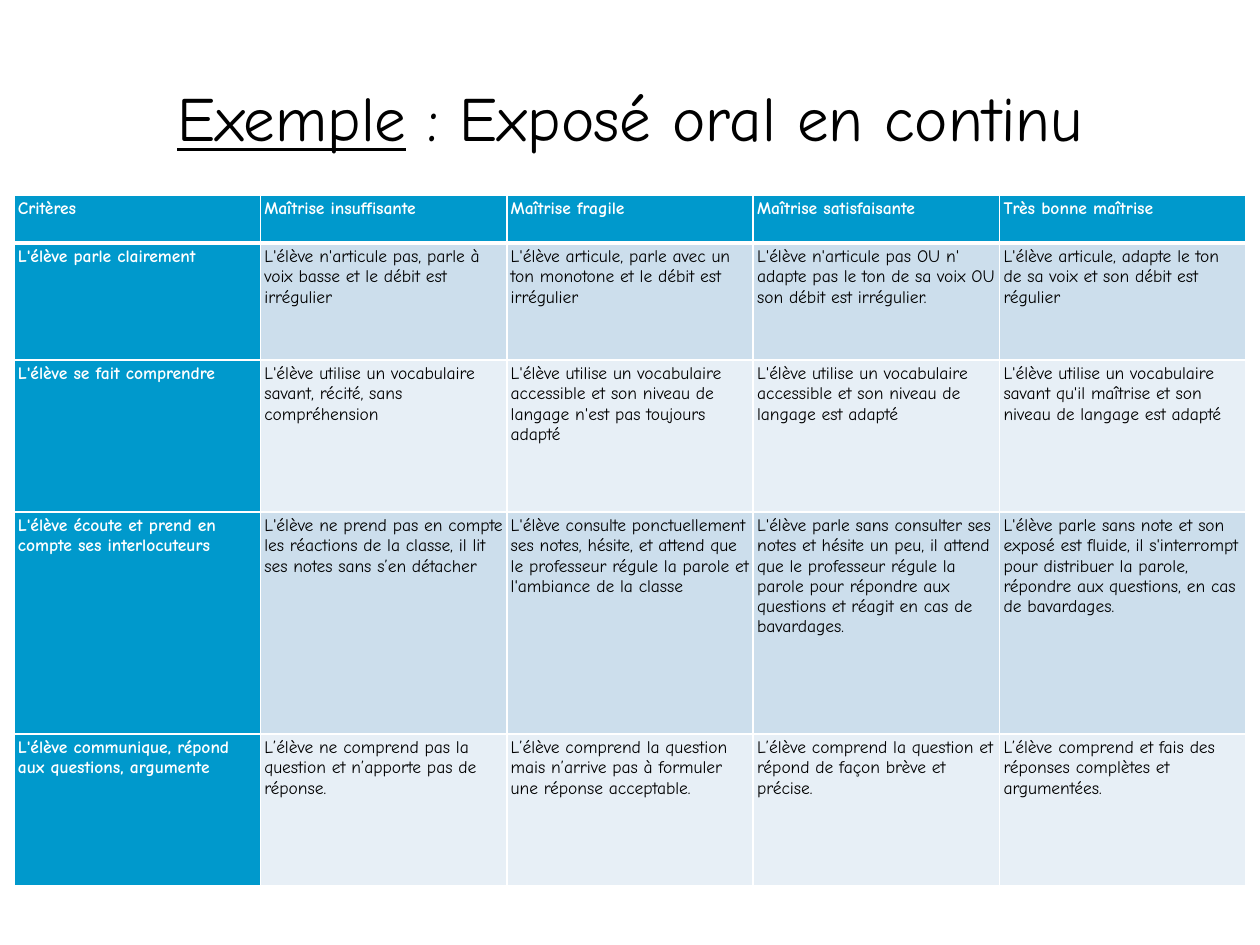
"""Build a slide with a grading grid for an oral talk."""
import pptx
import pptx.dml.color
import pptx.enum.text
import pptx.oxml
import pptx.oxml.ns
import pptx.util

RGB = pptx.dml.color.RGBColor
BLACK = RGB(0x00, 0x00, 0x00)
WHITE = RGB(0xFF, 0xFF, 0xFF)
BLUE = RGB(0x00, 0x99, 0xCC)
MID = RGB(0xCC, 0xDE, 0xEC)
PALE = RGB(0xE7, 0xEF, 0xF6)

HEIGHTS = [48, 117, 152, 222, 152]
GRID = [
    ["Critères", "Maîtrise insuffisante", "Maîtrise fragile",
     "Maîtrise satisfaisante", "Très bonne maîtrise"],
    ["L'élève parle clairement",
     "L'élève n'articule pas, parle à voix basse et le débit est irrégulier",
     "L'élève articule, parle avec un ton monotone et le débit est irrégulier",
     "L'élève n'articule pas OU n' adapte pas le ton de sa voix OU son débit est irrégulier.",
     "L'élève articule, adapte le ton de sa voix et son débit est régulier"],
    ["L'élève se fait comprendre",
     "L'élève utilise un vocabulaire savant, récité, sans compréhension",
     "L'élève utilise un vocabulaire accessible et son niveau de langage "
     "n'est pas toujours adapté",
     "L'élève utilise un vocabulaire accessible et son niveau de langage est adapté",
     "L'élève utilise un vocabulaire savant qu'il maîtrise et son niveau de langage est adapté"],
    ["L'élève écoute et prend en compte ses interlocuteurs",
     "L'élève ne prend pas en compte les réactions de la classe, "
     "il lit ses notes sans s’en détacher",
     "L'élève consulte ponctuellement ses notes, hésite, et attend que "
     "le professeur régule la parole et l'ambiance de la classe",
     "L'élève parle sans consulter ses notes et hésite un peu, il attend que le professeur "
     "régule la parole pour répondre aux questions et réagit en cas de bavardages.",
     "L'élève parle sans note et son exposé est fluide, il s'interrompt pour distribuer "
     "la parole, répondre aux questions, en cas de bavardages."],
    ["L'élève communique, répond aux questions, argumente",
     "L’élève ne comprend pas la question et n’apporte pas de réponse.",
     "L’élève comprend la question mais n’arrive pas à formuler une réponse acceptable.",
     "L’élève comprend la question et répond de façon brève et précise.",
     "L’élève comprend et fais des réponses complètes et argumentées."],
]


def px(num):
    return pptx.util.Emu(round(num * 914400 / 126))


def apply(item, form):
    for name, value in form.items():
        setattr(item, name, value)


class Pen:
    def __init__(self, slide, font):
        self.slide = slide
        self.font = font

    def words(self, para, text, color, **form):
        run = para.add_run()
        run.text = text
        run.font.color.rgb = color
        apply(run.font, {"name": self.font, **form})

    def title(self, box, parts, size):
        frame = self.slide.shapes.add_textbox(*map(px, box)).text_frame
        apply(frame, {"word_wrap": True,
                      "vertical_anchor": pptx.enum.text.MSO_ANCHOR.MIDDLE})
        para = frame.paragraphs[0]
        para.alignment = pptx.enum.text.PP_ALIGN.CENTER
        for text, line in parts:
            self.words(para, text, BLACK, size=pptx.util.Pt(size), underline=line)

    def border(self, cell, side, width):
        space = pptx.oxml.ns.nsdecls("a")
        cell._tc.get_or_add_tcPr().append(pptx.oxml.parse_xml(
            f'<a:ln{side} {space} w="{pptx.util.Pt(width)}"><a:solidFill>'
            f'<a:srgbClr val="{WHITE}"/></a:solidFill></a:ln{side}>'))

    def cell(self, cell, text, row, col):
        head = row == 0 or col == 0
        wide = {(0, "B"), (1, "T")}
        for side in "LRTB":
            self.border(cell, side, 3 if (row, side) in wide else 1)
        cell.fill.solid()
        cell.fill.fore_color.rgb = BLUE if head else MID if row % 2 else PALE
        sides = ("left", "right", "top", "bottom")
        apply(cell, {f"margin_{side}": px(4) for side in sides})
        self.words(cell.text_frame.paragraphs[0], text, WHITE if head else BLACK,
                   size=pptx.util.Pt(10), bold=head)

    def table(self, left, top, width, heights, grid):
        box = map(px, (left, top, width, sum(heights)))
        table = self.slide.shapes.add_table(len(grid), len(grid[0]), *box).table
        for row, (height, texts) in enumerate(zip(heights, grid)):
            table.rows[row].height = px(height)
            for col, text in enumerate(texts):
                self.cell(table.cell(row, col), text, row, col)


def main():
    deck = pptx.Presentation()
    apply(deck, {"slide_width": px(1260), "slide_height": px(945)})
    pen = Pen(deck.slides.add_slide(deck.slide_layouts[6]), "Comic Neue")
    pen.title((63, 38, 1134, 157),
              [("Exemple", True), (" : Exposé oral en continu", False)], 36)
    pen.table(14, 195, 1232, HEIGHTS, GRID)
    deck.save("out.pptx")


if __name__ == "__main__":
    main()
